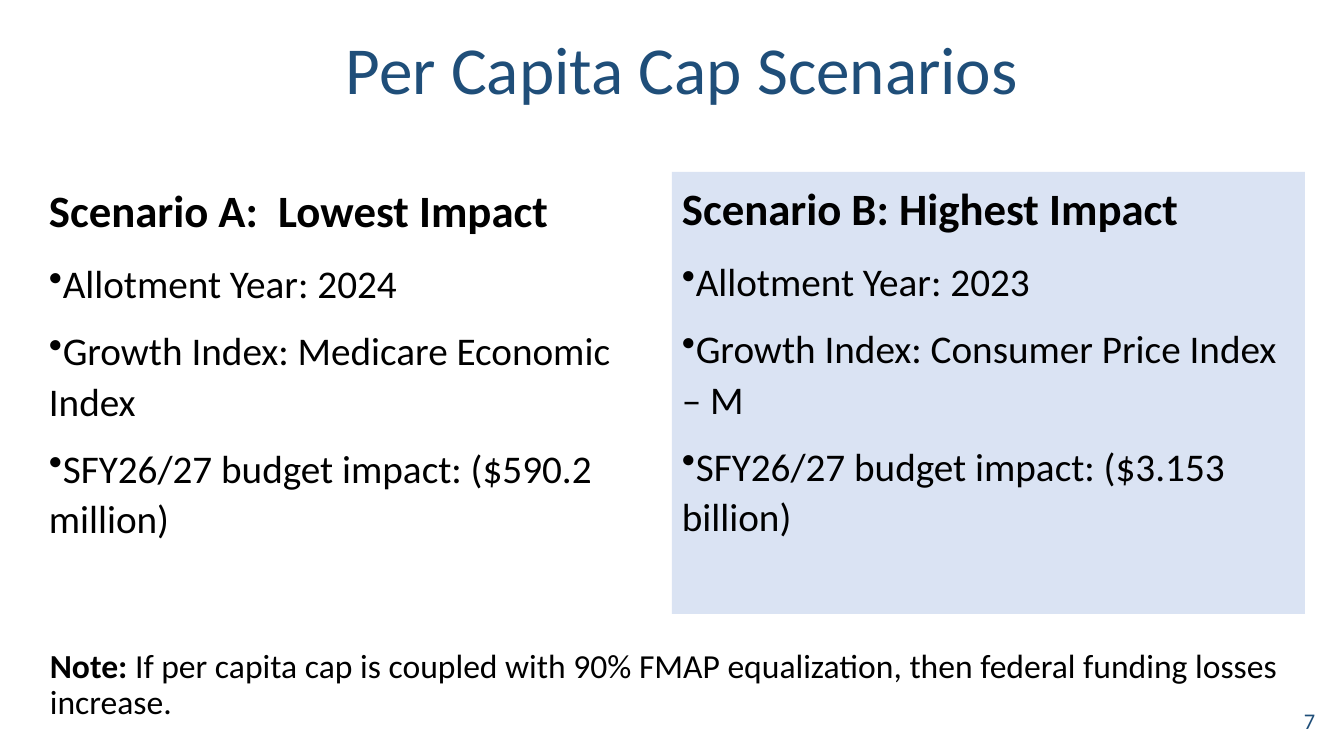
import pptx
import pptx.util
import pptx.dml.color
import pptx.enum.text
import pptx.oxml.ns
import lxml.etree

RGB = pptx.dml.color.RGBColor
ALIGN = pptx.enum.text.PP_ALIGN
ANCHOR = pptx.enum.text.MSO_ANCHOR

BLACK = RGB(0x00, 0x00, 0x00)
WHITE = RGB(0xFF, 0xFF, 0xFF)
NAVY = RGB(0x1F, 0x4E, 0x79)
PALE = RGB(0xDA, 0xE3, 0xF3)
FONT = "Calibri"
SCALE = 914400 / 100.8
HANG = 25

TITLE = "Per Capita Cap Scenarios"
NOTE = [
    ("Note: ", True),
    ("If per capita cap is coupled with 90% FMAP equalization, "
     "then federal funding losses increase.", False),
]
PAGE = "7"
PANELS = [
    {
        "box": (39, 174, 616, 442),
        "fill": WHITE,
        "head": "Scenario A:  Lowest Impact",
        "items": [
            "Allotment Year: 2024",
            "Growth Index: Medicare Economic Index",
            "SFY26/27 budget impact: ($590.2 million)",
        ],
    },
    {
        "box": (672, 172, 633, 442),
        "fill": PALE,
        "head": "Scenario B: Highest Impact",
        "items": [
            "Allotment Year: 2023",
            "Growth Index: Consumer Price Index – M",
            "SFY26/27 budget impact: ($3.153 billion)",
        ],
    },
]


def emu(px):
    return pptx.util.Emu(round(px * SCALE))


def add_box(slide, box, anchor=ANCHOR.TOP, fill=None):
    shape = slide.shapes.add_textbox(*map(emu, box))
    if fill is not None:
        shape.fill.solid()
        shape.fill.fore_color.rgb = fill
    frame = shape.text_frame
    frame.word_wrap = True
    frame.vertical_anchor = anchor
    return frame


def add_run(para, text, size, color=BLACK, bold=False):
    run = para.add_run()
    run.text = text
    run.font.name = FONT
    run.font.size = pptx.util.Pt(size)
    run.font.bold = bold
    run.font.color.rgb = color


def add_dot(para):
    props = para._p.get_or_add_pPr()
    props.set("marL", "0")
    props.set("indent", str(-emu(HANG)))
    dot = lxml.etree.SubElement(props, pptx.oxml.ns.qn("a:buChar"))
    dot.set("char", "•")


def add_panel(slide, panel):
    frame = add_box(slide, panel["box"], fill=panel["fill"])
    head = frame.paragraphs[0]
    head.line_spacing = 1.07
    head.space_after = pptx.util.Pt(8)
    add_run(head, panel["head"], 32, bold=True)
    for item in panel["items"]:
        para = frame.add_paragraph()
        add_dot(para)
        para.line_spacing = 1.07
        para.space_before = para.space_after = pptx.util.Pt(6)
        add_run(para, item, 28)


def main():
    deck = pptx.Presentation()
    deck.slide_width, deck.slide_height = emu(1344), emu(756)
    slide = deck.slides.add_slide(deck.slide_layouts[6])

    title = add_box(slide, (39, 0, 1286, 146), ANCHOR.MIDDLE).paragraphs[0]
    title.alignment = ALIGN.CENTER
    title.line_spacing = 0.9
    add_run(title, TITLE, 48, NAVY)

    for panel in PANELS:
        add_panel(slide, panel)

    note = add_box(slide, (40, 644, 1262, 109)).paragraphs[0]
    note.line_spacing = 0.9
    for text, bold in NOTE:
        add_run(note, text, 24, bold=bold)

    page = add_box(slide, (1023, 701, 302, 40), ANCHOR.MIDDLE).paragraphs[0]
    page.alignment = ALIGN.RIGHT
    add_run(page, PAGE, 16, NAVY)

    deck.save("out.pptx")


if __name__ == "__main__":
    main()
